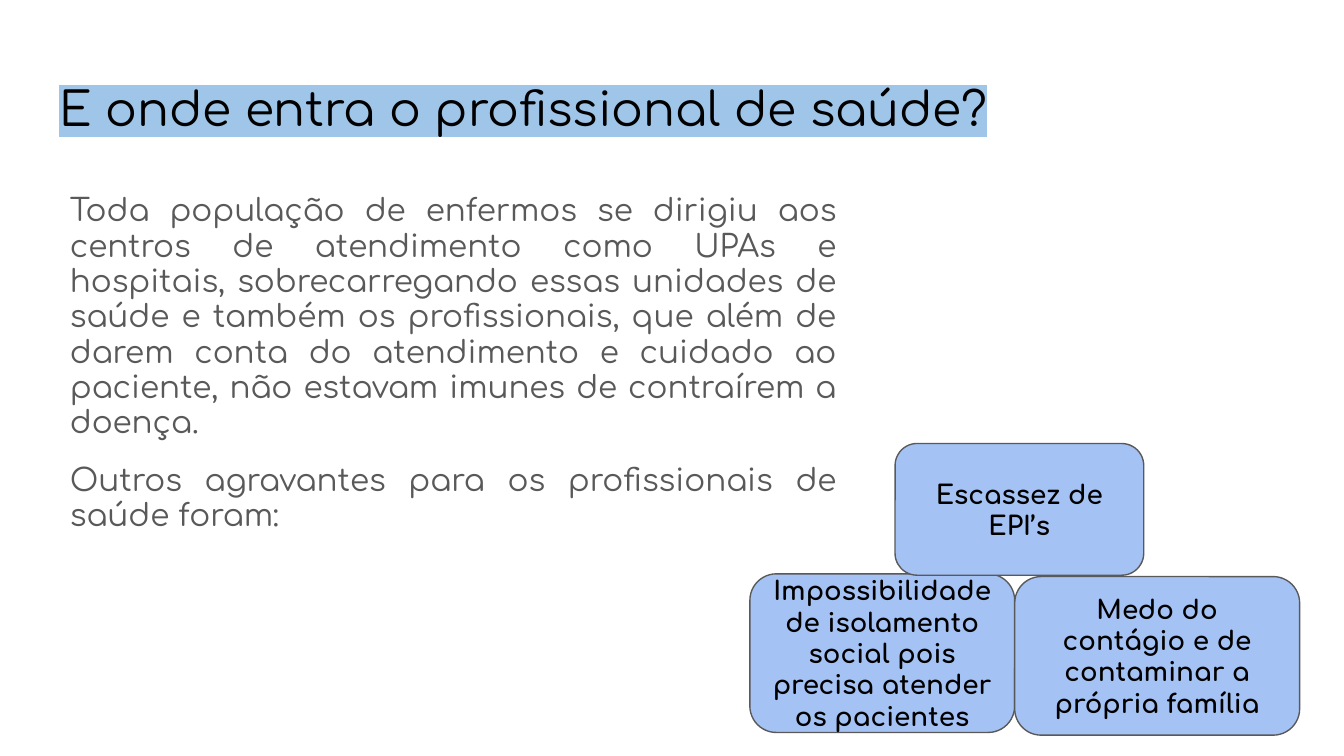
from lxml import etree
from pptx import Presentation
from pptx.dml.color import RGBColor
from pptx.enum.shapes import MSO_SHAPE
from pptx.enum.text import MSO_ANCHOR, MSO_AUTO_SIZE, PP_ALIGN
from pptx.oxml.ns import qn
from pptx.util import Inches, Pt

ROUND = MSO_SHAPE.ROUNDED_RECTANGLE
TOP, MIDDLE = MSO_ANCHOR.TOP, MSO_ANCHOR.MIDDLE
LEFT, CENTER, JUSTIFY = PP_ALIGN.LEFT, PP_ALIGN.CENTER, PP_ALIGN.JUSTIFY
NO_FIT = MSO_AUTO_SIZE.NONE
BLACK = RGBColor(0x00, 0x00, 0x00)
GRAY = RGBColor(0x59, 0x59, 0x59)
BLUE = RGBColor(0xA4, 0xC2, 0xF4)
MARK = RGBColor(0x9F, 0xC5, 0xE8)
FONT = "Comfortaa"


def place(shape, *box):
    for name, size in zip(("left", "top", "width", "height"), box):
        setattr(shape, name, Inches(size))


def write(shape, texts, anchor, para, font, color):
    frame = shape.text_frame
    sides = {f"margin_{side}": Inches(0.1) for side in ("left", "top", "right", "bottom")}
    form = {"word_wrap": True, "auto_size": NO_FIT, "vertical_anchor": anchor, **sides}
    for name, value in form.items():
        setattr(frame, name, value)
    frame.text = "\n".join(texts)
    for line in frame.paragraphs:
        for name, value in para.items():
            setattr(line, name, value)
        for name, value in font.items():
            setattr(line.runs[0].font, name, value)
        line.runs[0].font.color.rgb = color


deck = Presentation()
deck.slide_width = Inches(10)
deck.slide_height = Inches(10 * 9 / 16)
slide = deck.slides.add_slide(deck.slide_layouts[1])

title = slide.shapes.title
place(title, 0.34, 0.49, 9.32, 0.63)
write(title, ["E onde entra o profissional de saúde?"], TOP,
      {"alignment": LEFT}, {"name": FONT, "size": Pt(25.2)}, BLACK)
run = title.text_frame.paragraphs[0].runs[0]
light = etree.Element(qn("a:highlight"))
etree.SubElement(light, qn("a:srgbClr"), val=str(MARK))
run._r.get_or_add_rPr().find(qn("a:solidFill")).addnext(light)

body = slide.placeholders[1]
place(body, 0.42, 1.34, 5.9, 3.37)
write(body, [
    "Toda população de enfermos se dirigiu aos centros de atendimento como UPAs e "
    "hospitais, sobrecarregando essas unidades de saúde e também os profissionais, "
    "que além de darem conta do atendimento e cuidado ao paciente, não estavam "
    "imunes de contraírem a doença.",
    "Outros agravantes para os profissionais de saúde foram:",
], TOP, {"alignment": JUSTIFY, "line_spacing": 0.95, "space_before": Pt(0)},
    {"name": FONT, "size": Pt(16.6)}, GRAY)
body.text_frame.paragraphs[1].space_before = Pt(12)
for line in body.text_frame.paragraphs:
    node = line._p.get_or_add_pPr()
    node.set("marL", "0")
    node.set("indent", "0")
    etree.SubElement(node, qn("a:buNone"))

cards = [
    ("Impossibilidade de isolamento social pois precisa atender os pacientes",
     (5.58, 4.27, 1.97, 1.18)),
    ("Medo do contágio e de contaminar a própria família", (7.55, 4.29, 2.12, 1.18)),
    ("Escassez de EPI’s", (6.66, 3.3, 1.85, 0.98)),
]
for text, box in cards:
    card = slide.shapes.add_shape(ROUND, *map(Inches, box))
    card.shadow.inherit = False
    card.fill.solid()
    card.fill.fore_color.rgb = BLUE
    card.line.color.rgb = GRAY
    card.line.width = Pt(0.75)
    write(card, [text], MIDDLE, {"alignment": CENTER},
          {"name": FONT, "size": Pt(14), "bold": True}, BLACK)

deck.save("out.pptx")
